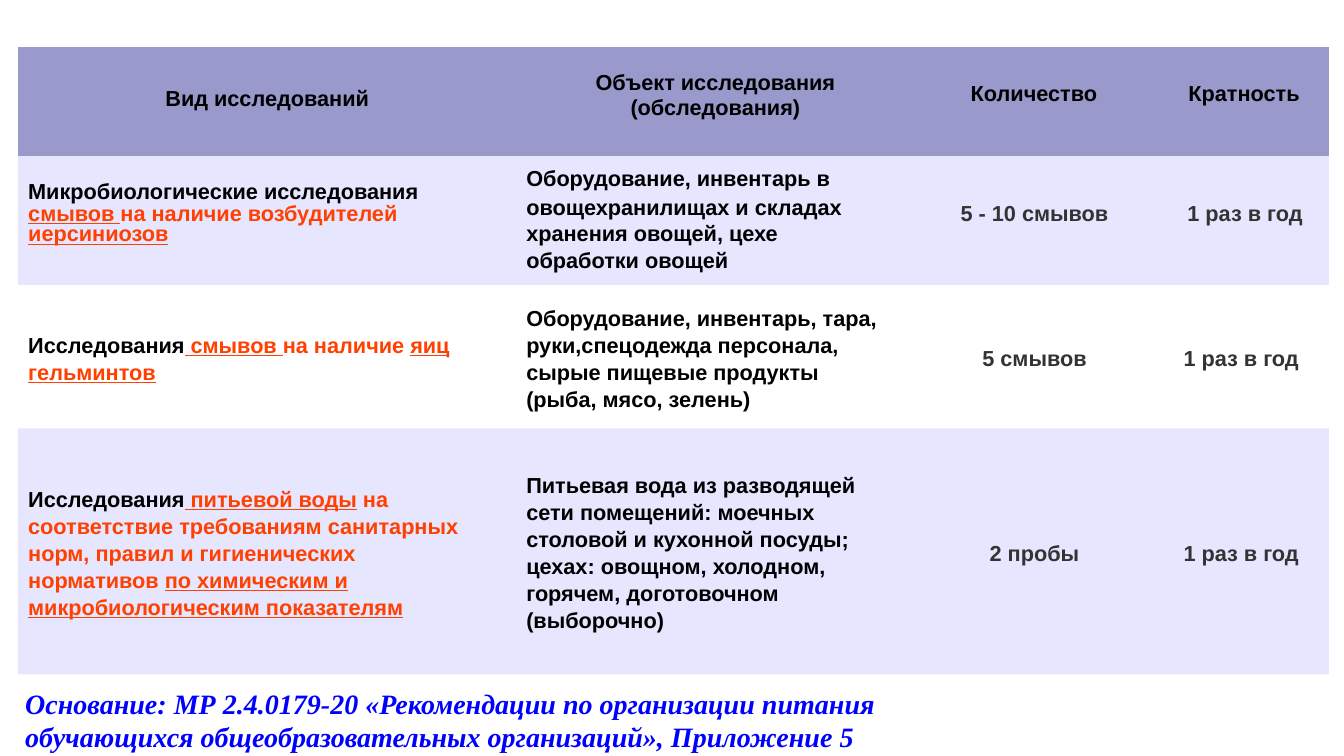
from lxml import etree
from pptx import Presentation
from pptx import util as u
from pptx.dml.color import RGBColor
from pptx.enum import shapes, text
from pptx.oxml import ns

COLORS = {"header": "9999CC", "band": "E6E6FF", "black": "000000",
          "grey": "333333", "red": "FF4000", "blue": "0000FF"}
LEFT, TOP, WIDTH = 0.18, 0.47, 13
COLUMNS = [4.56, 4.23, 2.4, 1.81]
ROWS = [1.08, 0.51, 0.19, 0.21, 0.37]
LINE_HEIGHT = 0.27
BODY_SIZE = 15.5
CENTER, RIGHT = text.PP_ALIGN.CENTER, text.PP_ALIGN.RIGHT


def color(name):
    return RGBColor.from_string(COLORS[name])


def red(words):
    return words, "red", False


def marked(words):
    return words, "red", True


def set_margins(holder, left=0, top=0, right=0):
    holder.margin_left, holder.margin_top = u.Inches(left), u.Inches(top)
    holder.margin_right, holder.margin_bottom = u.Inches(right), 0


def remove_borders(cell):
    """Switch off the four border lines, which must stand before the fill."""
    properties = cell._tc.get_or_add_tcPr()
    for index, side in enumerate(("a:lnL", "a:lnR", "a:lnT", "a:lnB")):
        line = etree.Element(ns.qn(side), w="0")
        etree.SubElement(line, ns.qn("a:noFill"))
        properties.insert(index, line)


def write(paragraph, runs, tone="black", size=BODY_SIZE, font="Arial",
          spacing=None, align=None):
    """Fill a paragraph with runs: plain strings or (words, tone, underlined)."""
    paragraph.font.name, paragraph.font.size = font, u.Pt(size)
    paragraph.font.bold = True
    paragraph.alignment = align
    paragraph.line_spacing = spacing
    for item in [runs] if isinstance(runs, str) else runs:
        words, run_tone, underlined = (item, tone, False) if isinstance(item, str) else item
        run = paragraph.add_run()
        run.text = words
        run.font.color.rgb = color(run_tone)
        if underlined:
            run.font.underline = True


def add_text(slide, box, lines, italic=False, **style):
    """Place a text box at (left, top, width, height), one paragraph a line."""
    frame = slide.shapes.add_textbox(*map(u.Inches, box)).text_frame
    frame.word_wrap = True
    set_margins(frame, left=0.01, top=0.02)
    for index, runs in enumerate(lines):
        paragraph = frame.add_paragraph() if index else frame.paragraphs[0]
        write(paragraph, runs, **style)
        paragraph.font.italic = italic


def add_research_table(slide, left, top):
    frame = slide.shapes.add_table(len(ROWS), len(COLUMNS), u.Inches(left), u.Inches(top),
                                   u.Inches(sum(COLUMNS)), u.Inches(sum(ROWS)))
    table = frame.table
    for column, width in zip(table.columns, COLUMNS):
        column.width = u.Inches(width)
    for index, (row, height) in enumerate(zip(table.rows, ROWS)):
        row.height = u.Inches(height)
        for cell in row.cells:
            cell.fill.solid()
            cell.fill.fore_color.rgb = color("band" if index else "header")
            remove_borders(cell)
            set_margins(cell)
            cell.text_frame.paragraphs[0].font.size = u.Pt(8)

    def fill(row, column, lines, left=0.0, top=0.0, right=0.0, **style):
        cell = table.cell(row, column)
        set_margins(cell, left, top, right)
        frame = cell.text_frame
        for index, runs in enumerate(lines):
            paragraph = frame.add_paragraph() if index else frame.paragraphs[0]
            write(paragraph, runs, **style)

    fill(0, 0, ["Вид исследований"], 0.38, 0.39, align=CENTER)
    fill(0, 1, ["Объект исследования", "(обследования)"], 0.48, 0.23,
         align=CENTER, spacing=u.Pt(17.8))
    fill(0, 2, ["Количество"], 0.17, 0.34, align=CENTER)
    fill(0, 3, ["Кратность"], 0, 0.34, 0.29, align=RIGHT)

    fill(1, 0, ["Микробиологические исследования"], 0.1, 0.23)
    fill(2, 0, [[marked("смывов "), red("на наличие возбудителей")]], 0.1,
         spacing=u.Pt(12.8))
    fill(3, 0, [[marked("иерсиниозов")]], 0.1, 0.07, spacing=u.Pt(8.9))

    storage = [("Оборудование, инвентарь в", 0.11, None),
               ("овощехранилищах и складах", 0, u.Pt(8.8)),
               ("хранения овощей, цехе", 0, u.Pt(14.1)),
               ("обработки овощей", 0, u.Pt(18.1))]
    for row, (words, inset, spacing) in enumerate(storage, start=1):
        fill(row, 1, [words], 0.48, inset, spacing=spacing)

    fill(2, 2, ["5 - 10 смывов"], 0.18, tone="grey", align=CENTER, spacing=u.Pt(12.8))
    fill(2, 3, ["1 раз в год"], right=0.26, tone="grey", align=RIGHT, spacing=u.Pt(12.8))


def add_band(slide, left, top, width, height):
    band = slide.shapes.add_shape(shapes.MSO_SHAPE.RECTANGLE,
                                  *map(u.Inches, (left, top, width, height)))
    band.shadow.inherit = False
    band.fill.solid()
    band.fill.fore_color.rgb = color("band")
    band.line.fill.background()


def add_record(slide, middle, method, subject, subject_lines, count):
    """Lay out one research record, its four texts centred on the height middle."""
    parts = [(0.27, 4.43, method, len(method), "black", None),
             (5.21, 3.61, subject, subject_lines, "black", None),
             (9.65, 1.21, [count], 1, "grey", CENTER),
             (11.7, 1.21, ["1 раз в год"], 1, "grey", CENTER)]
    for left, width, lines, line_count, tone, align in parts:
        height = line_count * LINE_HEIGHT + 0.02
        add_text(slide, (left, middle - height / 2, width, height), lines,
                 tone=tone, align=align, spacing=1.04)


def main():
    presentation = Presentation()
    presentation.slide_width, presentation.slide_height = u.Inches(13.33), u.Inches(7.5)
    slide = presentation.slides.add_slide(presentation.slide_layouts[6])

    add_research_table(slide, LEFT, TOP)
    add_band(slide, LEFT, 4.25, WIDTH, 2.44)
    add_record(slide, 3.54,
               [["Исследования", marked(" смывов "), red("на наличие "), marked("яиц")],
                [marked("гельминтов")]],
               ["Оборудование, инвентарь, тара, руки,спецодежда персонала, "
                "сырые пищевые продукты", "(рыба, мясо, зелень)"], 4, "5 смывов")
    add_record(slide, 5.47,
               [["Исследования", marked(" питьевой воды"), red(" на")],
                [red("соответствие требованиям санитарных")],
                [red("норм, правил и гигиенических")],
                [red("нормативов "), marked("по химическим и")],
                [marked("микробиологическим показателям")]],
               ["Питьевая вода из разводящей сети помещений: моечных столовой "
                "и кухонной посуды; цехах: овощном, холодном, горячем, доготовочном",
                "(выборочно)"], 6, "2 пробы")
    add_text(slide, (0.24, 6.79, 10.2, 0.7),
             ["Основание: МР 2.4.0179-20 «Рекомендации по организации питания",
              "обучающихся общеобразовательных организаций», Приложение 5"],
             italic=True, tone="blue", size=20, font="Times New Roman",
             spacing=u.Pt(23.8))
    presentation.save("out.pptx")


if __name__ == "__main__":
    main()
